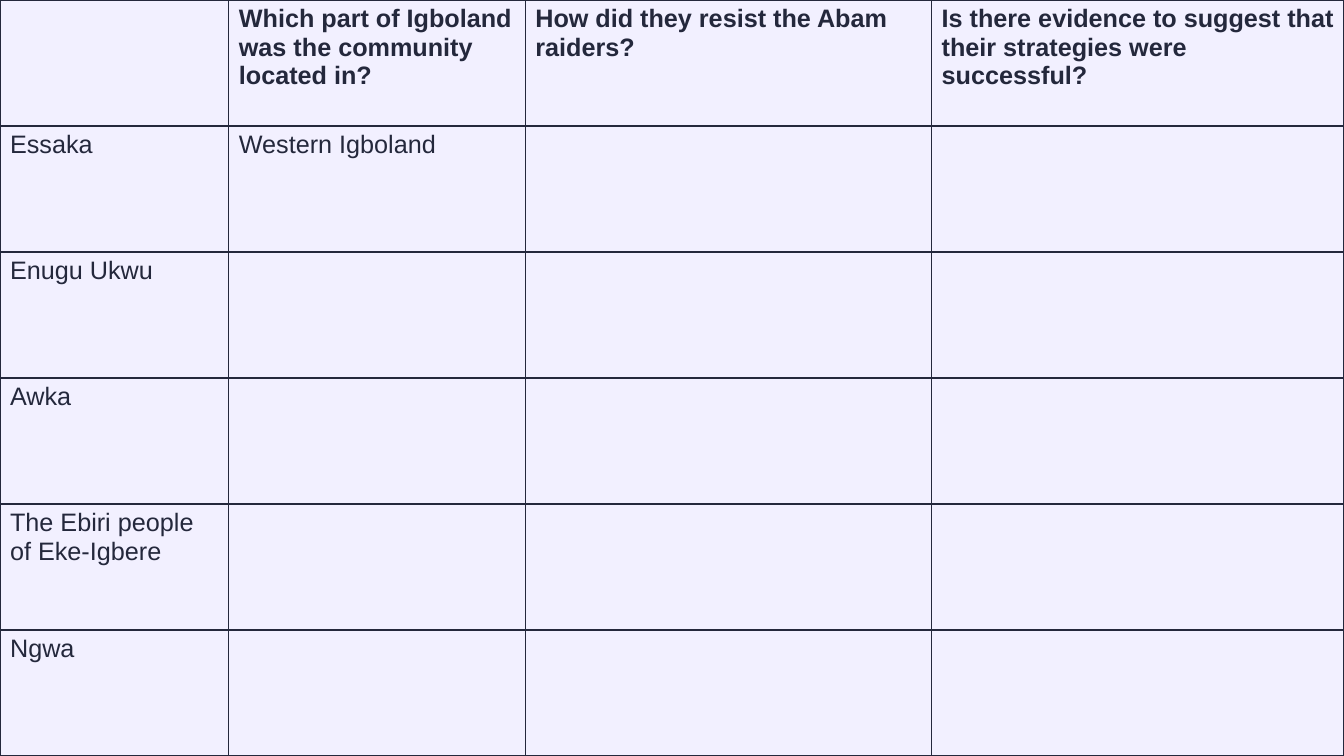
from lxml.etree import SubElement
from pptx import Presentation
from pptx.dml.color import RGBColor
from pptx.oxml import parse_xml
from pptx.oxml.ns import nsdecls, qn
from pptx.util import Inches, Pt

PAPER = "F2F0FF"
INK = "24283C"
COLUMN_WIDTHS = [2.27, 2.94, 4.03, 4.09]
ROW_HEIGHT = 1.25
QUESTIONS = [
    "",
    "Which part of Igboland was the community located in?",
    "How did they resist the Abam raiders?",
    "Is there evidence to suggest that their strategies were successful?",
]
COMMUNITIES = [
    ["Essaka", "Western Igboland"],
    ["Enugu Ukwu"],
    ["Awka"],
    ["The Ebiri people of Eke-Igbere"],
    ["Ngwa"],
]


def rgb(color):
    return RGBColor.from_string(color)


def add_borders(cell, color, width):
    tc_pr = cell._tc.get_or_add_tcPr()
    for i, side in enumerate(["lnL", "lnR", "lnT", "lnB"]):
        ln = parse_xml(f'<a:{side} {nsdecls("a")} w="{Pt(width)}"/>')
        fill = SubElement(ln, qn("a:solidFill"))
        SubElement(fill, qn("a:srgbClr"), val=color)
        tc_pr.insert(i, ln)


def fill_cell(cell, text, bold):
    cell.fill.solid()
    cell.fill.fore_color.rgb = rgb(PAPER)
    add_borders(cell, INK, 1)
    p = cell.text_frame.paragraphs[0]
    p.font.size = Pt(18)
    if text:
        r = p.add_run()
        r.text = text
        r.font.name = "Arial"
        r.font.size = Pt(18)
        r.font.bold = bold
        r.font.color.rgb = rgb(INK)


def add_community_table(s, left, top):
    rows = [QUESTIONS] + COMMUNITIES
    frame = s.shapes.add_table(
        len(rows), len(COLUMN_WIDTHS), Inches(left), Inches(top),
        Inches(sum(COLUMN_WIDTHS)), Inches(ROW_HEIGHT * len(rows)))
    table = frame.table
    table.horz_banding = False
    for column, width in zip(table.columns, COLUMN_WIDTHS):
        column.width = Inches(width)
    for i, texts in enumerate(rows):
        table.rows[i].height = Inches(ROW_HEIGHT)
        for j in range(len(COLUMN_WIDTHS)):
            text = texts[j] if j < len(texts) else ""
            fill_cell(table.cell(i, j), text, bold=i == 0)


def main():
    prs = Presentation()
    prs.slide_width = Inches(13.33)
    prs.slide_height = Inches(7.5)
    s = prs.slides.add_slide(prs.slide_layouts[6])
    s.background.fill.solid()
    s.background.fill.fore_color.rgb = rgb(PAPER)
    add_community_table(s, 0, 0)
    prs.save("out.pptx")


if __name__ == "__main__":
    main()
